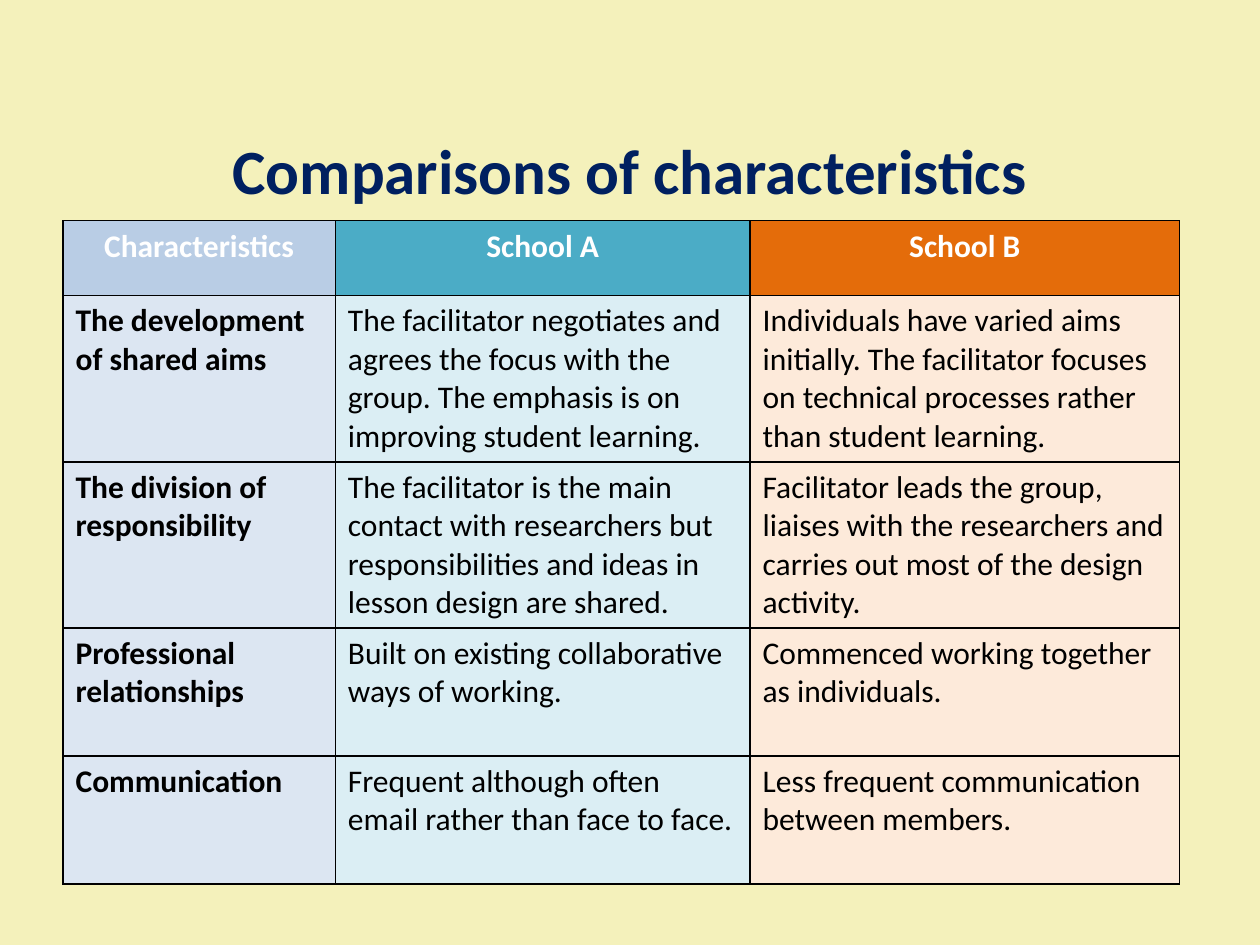
from lxml import etree
from pptx import Presentation
from pptx import util as u
from pptx.dml.color import RGBColor
from pptx.enum import text
from pptx.oxml.ns import qn

# Content
TITLE = "Comparisons of characteristics"
ROWS = [
    ("Characteristics", "School A", "School B"),
    ("The development of shared aims",
     "The facilitator negotiates and agrees the focus with the group. "
     "The emphasis is on improving student learning.",
     "Individuals have varied aims initially. The facilitator focuses on "
     "technical processes rather than student learning."),
    ("The division of responsibility",
     "The facilitator is the main contact with researchers but "
     "responsibilities and ideas in lesson design are shared.",
     "Facilitator leads the group, liaises with the researchers and "
     "carries out most of the design activity."),
    ("Professional relationships",
     "Built on existing collaborative ways of working.",
     "Commenced working together as individuals."),
    ("Communication",
     "Frequent although often email rather than face to face.",
     "Less frequent communication between members."),
]

# Layout (cm) and formats
COL_WIDTHS = [5.49, 8.36, 8.66]
ROW_HEIGHTS = [1.51, 3.35, 3.35, 2.58, 2.58]
COLORS = {"background": "F4F1BB", "title": "002060", "header": "FFFFFF",
          "body": "000000", "border": "000000"}
HEADER_FILLS = ["B9CDE5", "4BACC6", "E46C0A"]
BODY_FILLS = ["DCE6F2", "DBEEF4", "FDEADA"]
FORMATS = {
    "title": {"name": "Calibri", "size": u.Pt(36), "bold": True},
    "header": {"name": "Calibri", "size": u.Pt(18), "bold": True},
    "label": {"name": "Calibri", "size": u.Pt(18), "bold": True},
    "body": {"name": "Calibri", "size": u.Pt(18), "bold": False},
}


def write(tf, words, style, color, align):
    p = tf.paragraphs[0]
    p.alignment = align
    r = p.add_run()
    r.text = words
    for name, value in FORMATS[style].items():
        setattr(r.font, name, value)
    r.font.color.rgb = RGBColor.from_string(COLORS[color])


def add_borders(cell):
    tcPr = cell._tc.get_or_add_tcPr()
    for i, side in enumerate(("lnL", "lnR", "lnT", "lnB")):
        ln = etree.Element(qn(f"a:{side}"), w=str(u.Pt(1)))
        fill = etree.SubElement(ln, qn("a:solidFill"))
        etree.SubElement(fill, qn("a:srgbClr"), val=COLORS["border"])
        tcPr.insert(i, ln)


prs = Presentation()
prs.slide_width, prs.slide_height = u.Cm(25.4), u.Cm(19.05)
s = prs.slides.add_slide(prs.slide_layouts[6])
s.background.fill.solid()
s.background.fill.fore_color.rgb = RGBColor.from_string(COLORS["background"])

# Title
sp = s.shapes.add_textbox(u.Cm(1.27), u.Cm(1.83), u.Cm(22.86), u.Cm(3.18))
tf = sp.text_frame
tf.word_wrap = True
tf.vertical_anchor = text.MSO_ANCHOR.MIDDLE
write(tf, TITLE, "title", "title", text.PP_ALIGN.CENTER)

# Comparison table
table = s.shapes.add_table(
    len(ROWS), len(COL_WIDTHS), u.Cm(1.27), u.Cm(4.45),
    u.Cm(sum(COL_WIDTHS)), u.Cm(sum(ROW_HEIGHTS))).table
for column, width in zip(table.columns, COL_WIDTHS):
    column.width = u.Cm(width)
for row, height in zip(table.rows, ROW_HEIGHTS):
    row.height = u.Cm(height)

for i, row in enumerate(ROWS):
    for j, words in enumerate(row):
        cell = table.cell(i, j)
        cell.fill.solid()
        fills = BODY_FILLS if i else HEADER_FILLS
        cell.fill.fore_color.rgb = RGBColor.from_string(fills[j])
        add_borders(cell)
        if i == 0:
            write(cell.text_frame, words, "header", "header",
                  text.PP_ALIGN.CENTER)
        else:
            write(cell.text_frame, words, "body" if j else "label", "body",
                  text.PP_ALIGN.LEFT)

prs.save("out.pptx")
